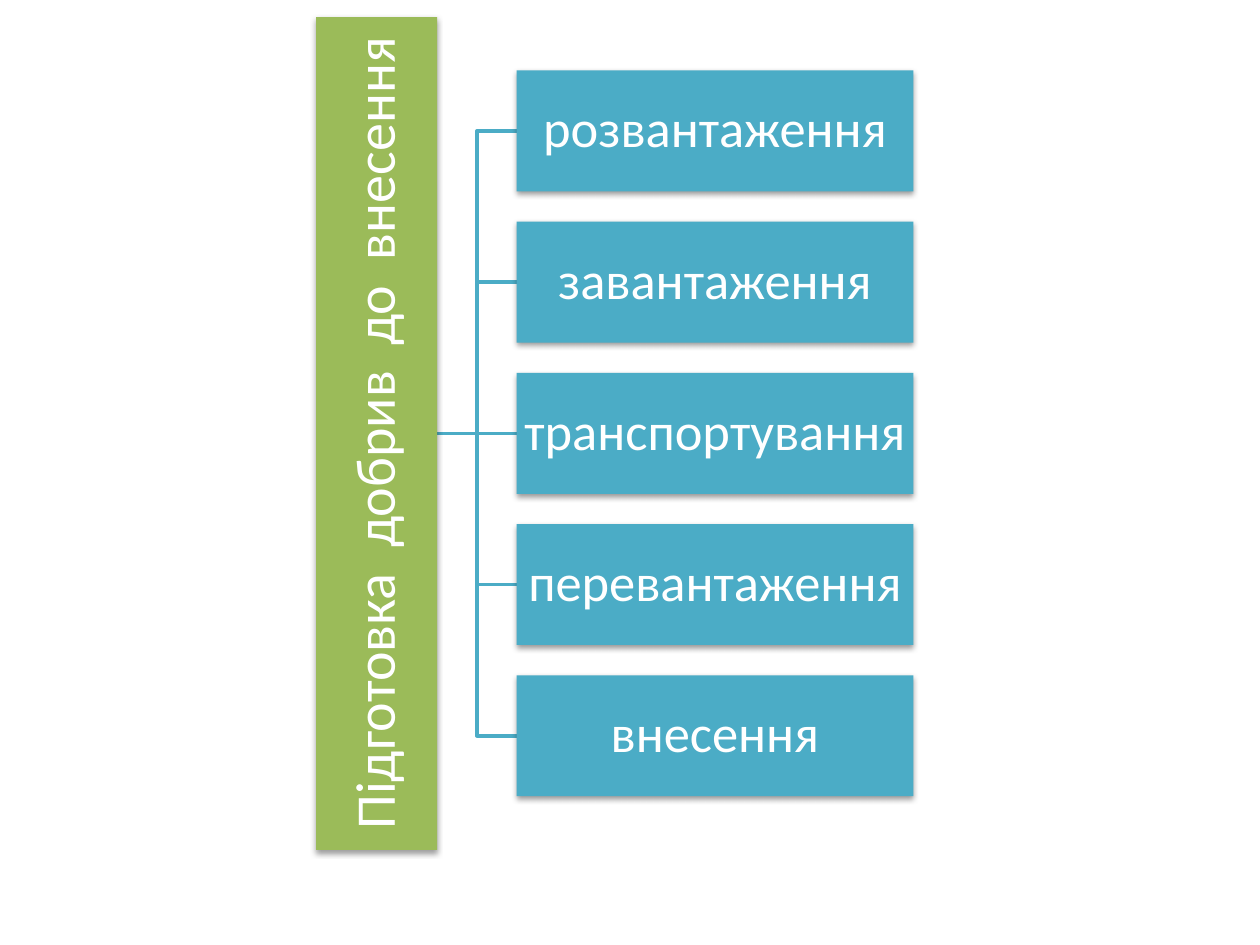
from dataclasses import dataclass

import lxml.etree
import pptx
import pptx.dml.color
import pptx.enum.shapes
import pptx.enum.text
import pptx.oxml
import pptx.oxml.ns
import pptx.util
from pptx.util import Inches

COLORS = {"root": "9BBB59", "step": "4BACC6", "text": "FFFFFF", "shadow": "000000"}
FONT = "Calibri"

ROOT_TEXT = "Підготовка  добрив  до  внесення"
STEPS = [
    "розвантаження",
    "завантаження",
    "транспортування",
    "перевантаження",
    "внесення",
]

BOX_HEIGHT = 0.96
ROOT_LENGTH = 6.61
ROOT_RIGHT = 3.47
STEP_LEFT = 4.1
STEP_WIDTH = 3.15
STEP_PITCH = 1.2
CENTER_Y = 3.44


@dataclass
class Box:
    label: str
    center_x: float
    center_y: float
    width: float
    color: str
    font_size: int
    rotation: int = 0


def rgb(name: str) -> pptx.dml.color.RGBColor:
    return pptx.dml.color.RGBColor.from_string(COLORS[name])


def add_drop_shadow(shape) -> None:
    shape.shadow.inherit = False
    effects = shape._element.spPr.find(pptx.oxml.ns.qn("a:effectLst"))
    effects.append(pptx.oxml.parse_xml(
        f'<a:outerShdw {pptx.oxml.ns.nsdecls("a")} blurRad="40000" dist="20000" '
        'dir="5400000" rotWithShape="0">'
        f'<a:srgbClr val="{COLORS["shadow"]}"><a:alpha val="38000"/></a:srgbClr>'
        '</a:outerShdw>'
    ))


def draw_box(slide, box: Box) -> None:
    shape = slide.shapes.add_shape(
        pptx.enum.shapes.MSO_SHAPE.RECTANGLE,
        Inches(box.center_x - box.width / 2),
        Inches(box.center_y - BOX_HEIGHT / 2),
        Inches(box.width),
        Inches(BOX_HEIGHT),
    )
    shape.rotation = box.rotation
    shape.fill.solid()
    shape.fill.fore_color.rgb = rgb(box.color)
    shape.line.fill.background()
    add_drop_shadow(shape)

    frame = shape.text_frame
    frame.text = box.label
    frame.word_wrap = True
    frame.vertical_anchor = pptx.enum.text.MSO_ANCHOR.MIDDLE
    frame.margin_left = frame.margin_right = Inches(0.02)
    frame.margin_top = frame.margin_bottom = Inches(0.02)
    paragraph = frame.paragraphs[0]
    paragraph.alignment = pptx.enum.text.PP_ALIGN.CENTER
    paragraph.line_spacing = 0.9
    font = paragraph.runs[0].font
    font.name = FONT
    font.size = pptx.util.Pt(box.font_size)
    font.color.rgb = rgb("text")


def draw_branch(slide, step_y: float) -> None:
    """Join the root bar to the step centred at step_y."""
    kinds = pptx.enum.shapes.MSO_CONNECTOR
    branch = slide.shapes.add_connector(
        kinds.STRAIGHT if step_y == CENTER_Y else kinds.ELBOW,
        Inches(ROOT_RIGHT), Inches(CENTER_Y), Inches(STEP_LEFT), Inches(step_y),
    )
    branch.line.color.rgb = rgb("step")
    branch.line.width = pptx.util.Pt(2)
    lxml.etree.SubElement(branch._element.spPr, pptx.oxml.ns.qn("a:effectLst"))


def main() -> None:
    presentation = pptx.Presentation()
    presentation.slide_width = Inches(10)
    presentation.slide_height = Inches(7.5)
    slide = presentation.slides.add_slide(presentation.slide_layouts[6])

    middle = len(STEPS) // 2
    root = Box(ROOT_TEXT, ROOT_RIGHT - BOX_HEIGHT / 2, CENTER_Y, ROOT_LENGTH,
               "root", 32, rotation=270)
    steps = [
        Box(label, STEP_LEFT + STEP_WIDTH / 2, CENTER_Y + (index - middle) * STEP_PITCH,
            STEP_WIDTH, "step", 30)
        for index, label in enumerate(STEPS)
    ]

    for step in reversed(steps):
        draw_branch(slide, step.center_y)
    for box in [root, *steps]:
        draw_box(slide, box)

    presentation.save("out.pptx")


if __name__ == "__main__":
    main()
